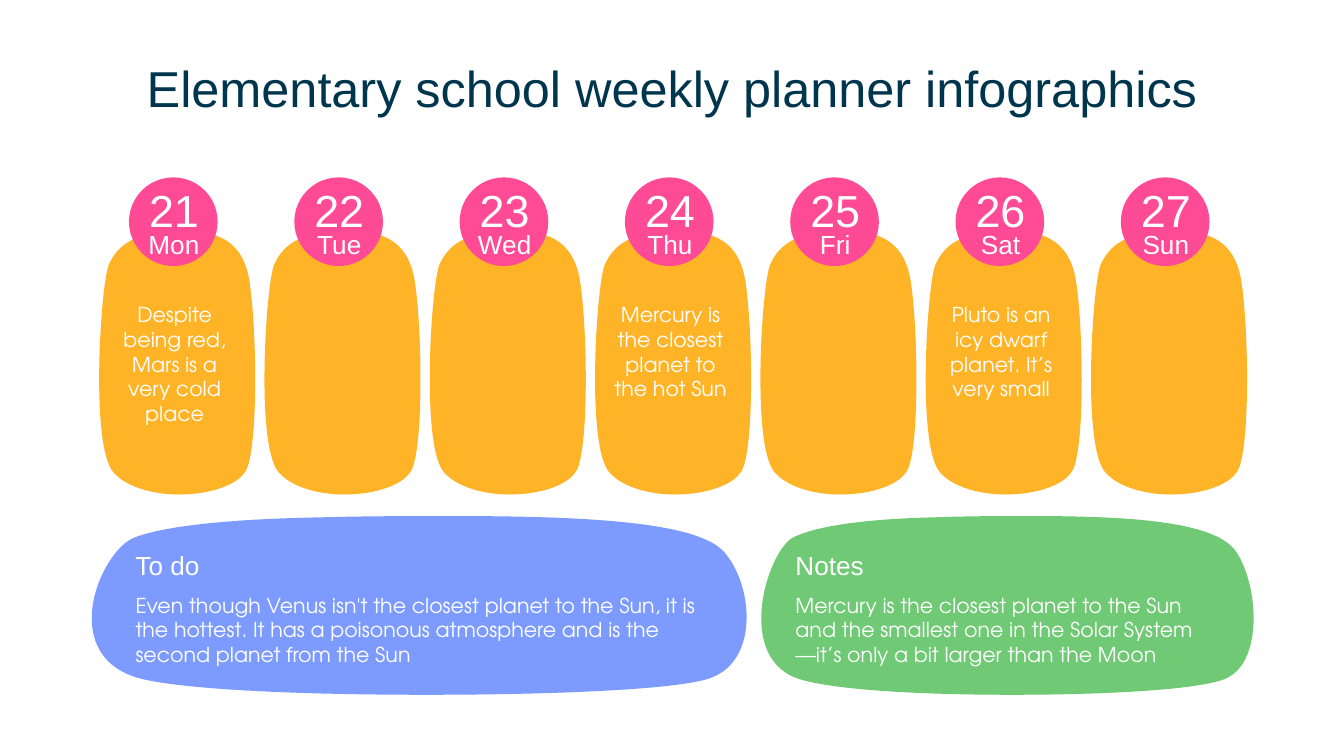
from pptx import Presentation
from pptx.dml.color import RGBColor
from pptx.enum.shapes import MSO_SHAPE
from pptx.enum.text import MSO_ANCHOR, PP_ALIGN
from pptx.oxml.ns import qn
from pptx.oxml.xmlchemy import OxmlElement
from pptx.util import Pt

PX = 9144
NAVY = RGBColor(0x00, 0x35, 0x4E)
WHITE = RGBColor(0xFF, 0xFF, 0xFF)
AMBER = RGBColor(0xFF, 0xB4, 0x28)
PINK = RGBColor(0xFF, 0x4A, 0x95)
BLUE = RGBColor(0x7D, 0x9B, 0xFF)
GREEN = RGBColor(0x70, 0xC9, 0x74)
HEAD = "Arial"
BODY = "TeX Gyre Adventor"

TALL = [
    (71, 0),
    (64, 0), (56, 1), (47, 2),
    (34, 4), (21, 9), (14, 25),
    (8, 39), (0, 158), (17, 179),
    (26, 190), (46, 196), (66, 196),
    (89, 196), (112, 189), (117, 176),
    (125, 155), (124, 75), (119, 40),
    (115, 8), (96, 0), (71, 0),
]
WIDE = [
    (297, 0),
    (266, 0), (233, 0), (198, 1),
    (143, 2), (86, 6), (60, 16),
    (34, 26), (0, 108), (69, 122),
    (108, 130), (193, 133), (277, 133),
    (374, 133), (469, 129), (490, 120),
    (525, 106), (520, 51), (499, 27),
    (480, 5), (402, 0), (297, 0),
]
DAYS = [
    ("Mon", "Despite being red, Mars is a very cold place"),
    ("Tue", ""),
    ("Wed", ""),
    ("Thu", "Mercury is the closest planet to the hot Sun"),
    ("Fri", ""),
    ("Sat", "Pluto is an icy dwarf planet. It’s very small"),
    ("Sun", ""),
]
TODO = (
    "Even though Venus isn't the closest planet to the Sun, it is the hottest. "
    "It has a poisonous atmosphere and is the second planet from the Sun"
)
NOTES = (
    "Mercury is the closest planet to the Sun and the smallest one "
    "in the Solar System—it’s only a bit larger than the Moon"
)


def paint(shape, color):
    shape.shadow.inherit = False
    shape.fill.solid()
    shape.fill.fore_color.rgb = color
    shape.line.fill.background()


def add_text(shapes, text, box, size, font=HEAD, color=WHITE, align=PP_ALIGN.CENTER):
    label = shapes.add_textbox(*(n * PX for n in box))
    frame = label.text_frame
    frame.word_wrap = True
    frame.margin_left = frame.margin_right = 10 * PX
    frame.margin_top = frame.margin_bottom = 10 * PX
    frame.text = text
    para = frame.paragraphs[0]
    para.alignment = align
    style = para.runs[0].font
    style.size = Pt(size)
    style.name = font
    style.color.rgb = color
    return label


def add_blob(shapes, curve, left, top, width, color):
    ratio = width / max(x for x, _ in curve)
    spots = [(left + round(x * ratio), top + y) for x, y in curve]
    pen = shapes.build_freeform(*spots[0], scale=PX)
    pen.add_line_segments(spots[1:], close=True)
    blob = pen.convert_to_shape()
    paint(blob, color)
    lines = list(blob._element.iter(qn("a:lnTo")))
    for i in range(0, len(lines), 3):
        bend = OxmlElement("a:cubicBezTo")
        lines[i].addprevious(bend)
        for line in lines[i:i + 3]:
            bend.append(line[0])
            line.getparent().remove(line)


def add_day(slide, left, date, name, note):
    shapes = slide.shapes.add_group_shape().shapes
    add_blob(shapes, TALL, left, 172, 125, AMBER)
    disc = shapes.add_shape(
        MSO_SHAPE.OVAL, (left + 29) * PX, 132 * PX, 66 * PX, 66 * PX
    )
    paint(disc, PINK)
    add_text(shapes, name, (left + 6, 160, 113, 29), 14)
    add_text(shapes, str(date), (left + 6, 126, 113, 46), 24)
    if note:
        add_text(shapes, note, (left + 6, 215, 114, 87), 11, BODY)


def add_panel(slide, left, width, inset, span, color, head, body):
    shapes = slide.shapes.add_group_shape().shapes
    add_blob(shapes, WIDE, left, 384, width, color)
    edge = left + inset
    add_text(shapes, head, (edge, 399, 113, 29), 14, align=PP_ALIGN.LEFT)
    add_text(shapes, body, (edge, 431, span, 63), 11, BODY, align=PP_ALIGN.LEFT)


def main():
    deck = Presentation()
    deck.slide_width = 1000 * PX
    deck.slide_height = deck.slide_width * 9 // 16
    slide = deck.slides.add_slide(deck.slide_layouts[6])
    title = add_text(
        slide.shapes, "Elementary school weekly planner infographics",
        (50, 45, 900, 40), 27, color=NAVY,
    )
    title.text_frame.vertical_anchor = MSO_ANCHOR.MIDDLE
    for i, (name, note) in enumerate(DAYS):
        add_day(slide, 67 + 123 * i, 21 + i, name, note)
    add_panel(slide, 40, 525, 51, 445, BLUE, "To do", TODO)
    add_panel(slide, 545, 395, 37, 325, GREEN, "Notes", NOTES)
    deck.save("out.pptx")


if __name__ == "__main__":
    main()
